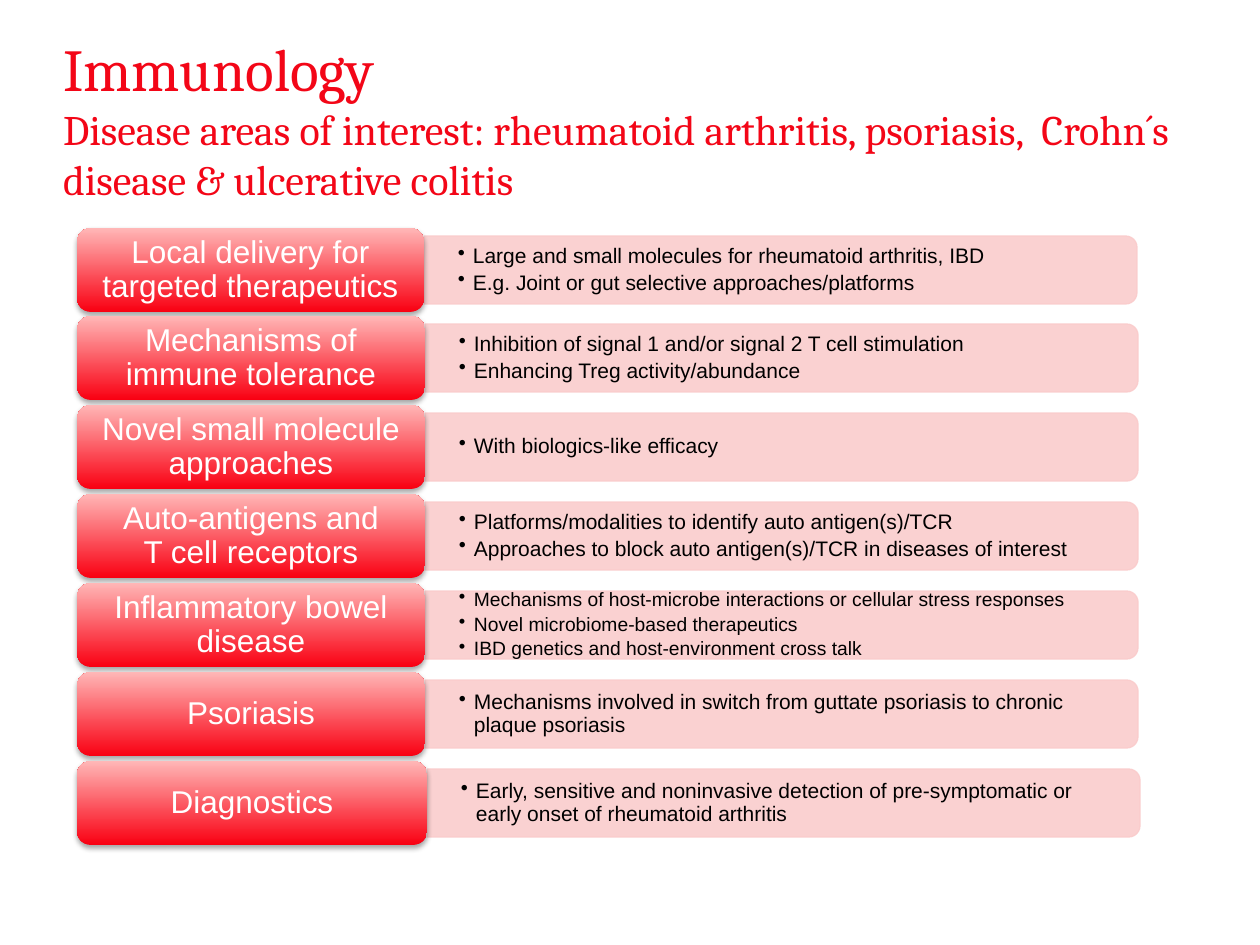
from lxml.etree import SubElement
from pptx import Presentation
from pptx.dml.color import RGBColor
from pptx.enum.shapes import MSO_SHAPE as SHAPE
from pptx.enum.text import MSO_ANCHOR as ANCHOR, MSO_AUTO_SIZE as AUTOSIZE, PP_ALIGN as ALIGN
from pptx.oxml.ns import qn
from pptx.util import Emu, Pt

TITLE_RED = RGBColor(0xF3, 0x06, 0x17)
TILE_RED = RGBColor(0xF9, 0x00, 0x12)
TILE_PINK = RGBColor(0xFF, 0xB7, 0xB7)
BAR_PINK = RGBColor(0xFA, 0xCC, 0xCC)
WHITE = RGBColor(0xFF, 0xFF, 0xFF)
BLACK = RGBColor(0, 0, 0)

PX_PER_INCH = 126
LEFT, TOP, TILE_H, BAR_H = 77, 228, 84, 68
BAR_W = 713
ROW_SPAN = 533  # from the first row's top to the last row's top

# tile width, tile lines, bullet size, bullets
ROWS = [
    (347, ["Local delivery for targeted therapeutics"], 12,
     ["Large and small molecules for rheumatoid arthritis, IBD",
      "E.g. Joint or gut selective approaches/platforms"]),
    (348, ["Mechanisms of immune tolerance"], 12,
     ["Inhibition of signal 1 and/or signal 2 T cell stimulation",
      "Enhancing Treg activity/abundance"]),
    (348, ["Novel small molecule approaches"], 12,
     ["With biologics-like efficacy"]),
    (348, ["Auto-antigens and", "T cell receptors"], 12,
     ["Platforms/modalities to identify auto antigen(s)/TCR",
      "Approaches to block auto antigen(s)/TCR in diseases of interest"]),
    (348, ["Inflammatory bowel disease"], 11,
     ["Mechanisms of host-microbe interactions or cellular stress responses",
      "Novel microbiome-based therapeutics",
      "IBD genetics and host-environment cross talk"]),
    (348, ["Psoriasis"], 12,
     ["Mechanisms involved in switch from guttate psoriasis to chronic plaque psoriasis"]),
    (350, ["Diagnostics"], 12,
     ["Early, sensitive and noninvasive detection of pre-symptomatic or "
      "early onset of rheumatoid arthritis"]),
]


def px(n):
    return Emu(round(n * 914400 / PX_PER_INCH))


class SlideBuilder:
    """Holds the fonts and the slide that elements are added to."""
    title_font = "Cambria"
    body_font = "Arial"

    def __init__(self, slide):
        self.slide = slide

    def frame(self, tf, margin_x, margin_y, anchor):
        tf.word_wrap = True
        tf.auto_size = AUTOSIZE.NONE
        tf.vertical_anchor = anchor
        tf.margin_left = tf.margin_right = px(margin_x)
        tf.margin_top = tf.margin_bottom = px(margin_y)

    def run(self, p, text, size, color, font):
        r = p.add_run()
        r.text = text
        r.font.size = Pt(size)
        r.font.name = font
        r.font.color.rgb = color

    def title(self, x, y, w, h, heading, subheading):
        sp = self.slide.shapes.title
        sp.left, sp.top, sp.width, sp.height = map(px, (x, y, w, h))
        self.frame(sp.text_frame, 0, 0, ANCHOR.TOP)
        p = sp.text_frame.paragraphs[0]
        p.alignment = ALIGN.LEFT
        self.run(p, heading, 34, TITLE_RED, self.title_font)
        p.add_line_break()
        self.run(p, subheading, 24, TITLE_RED, self.title_font)

    def bar(self, x, y, w, h):
        """Pale bar rounded at its right end: an upright shape turned a quarter."""
        sp = self.slide.shapes.add_shape(
            SHAPE.ROUND_2_SAME_RECTANGLE,
            px(x + (w - h) / 2), px(y + (h - w) / 2), px(h), px(w))
        sp.rotation = 90
        sp.shadow.inherit = False
        sp.line.width = Pt(0.75)
        for fill in (sp.fill, sp.line.fill):
            fill.solid()
            fill.fore_color.rgb = BAR_PINK
        for clr in sp._element.spPr.iter(qn("a:srgbClr")):
            SubElement(clr, qn("a:alpha"), val="90000")

    def bullets(self, x, y, w, h, size, items):
        tf = self.slide.shapes.add_textbox(px(x), px(y), px(w), px(h)).text_frame
        self.frame(tf, 34, 18, ANCHOR.MIDDLE)
        for i, item in enumerate(items):
            p = tf.add_paragraph() if i else tf.paragraphs[0]
            pPr = p._p.get_or_add_pPr()
            pPr.set("marL", str(px(15)))
            pPr.set("indent", str(px(-15)))
            SubElement(pPr, qn("a:buChar"), char="•")
            p.level = 1
            p.line_spacing = 0.9
            p.space_after = Pt(2.2)
            self.run(p, item, size, BLACK, self.body_font)

    def tile(self, x, y, w, h, lines):
        sp = self.slide.shapes.add_shape(
            SHAPE.ROUNDED_RECTANGLE, px(x), px(y), px(w), px(h))
        sp.fill.gradient()
        sp.fill.gradient_angle = 90
        for stop, color in zip(sp.fill.gradient_stops, (TILE_RED, TILE_PINK)):
            stop.color.rgb = color
        sp.line.fill.background()
        self.drop_shadow(sp)
        self.frame(sp.text_frame, 14, 9, ANCHOR.MIDDLE)
        p = sp.text_frame.paragraphs[0]
        p.alignment = ALIGN.CENTER
        p.line_spacing = 0.9
        for i, line in enumerate(lines):
            if i:
                p.add_line_break()
            self.run(p, line, 18, WHITE, self.body_font)

    def drop_shadow(self, sp):
        sp.shadow.inherit = False
        effects = sp._element.spPr.find(qn("a:effectLst"))
        shadow = SubElement(effects, qn("a:outerShdw"), blurRad=str(Pt(3.1)),
                            dist=str(Pt(1.8)), dir="5400000", rotWithShape="0")
        clr = SubElement(shadow, qn("a:srgbClr"), val="000000")
        SubElement(clr, qn("a:alpha"), val="35000")


def main():
    prs = Presentation()
    prs.slide_width, prs.slide_height = px(1260), px(945)
    builder = SlideBuilder(prs.slides.add_slide(prs.slide_layouts[5]))
    builder.title(63, 32, 1134, 137, "Immunology",
                  "Disease areas of interest: rheumatoid arthritis, psoriasis,  "
                  "Crohn´s disease & ulcerative colitis")
    for i, (tile_w, lines, size, items) in enumerate(ROWS):
        y = TOP + ROW_SPAN * i // (len(ROWS) - 1)
        bar_x, bar_y = LEFT + tile_w, y + (TILE_H - BAR_H) // 2
        builder.bar(bar_x, bar_y, BAR_W, BAR_H)
        builder.bullets(bar_x, bar_y + 4, BAR_W - 3, BAR_H - 8, size, items)
        builder.tile(LEFT, y, tile_w, TILE_H, lines)
    prs.save("out.pptx")


if __name__ == "__main__":
    main()
